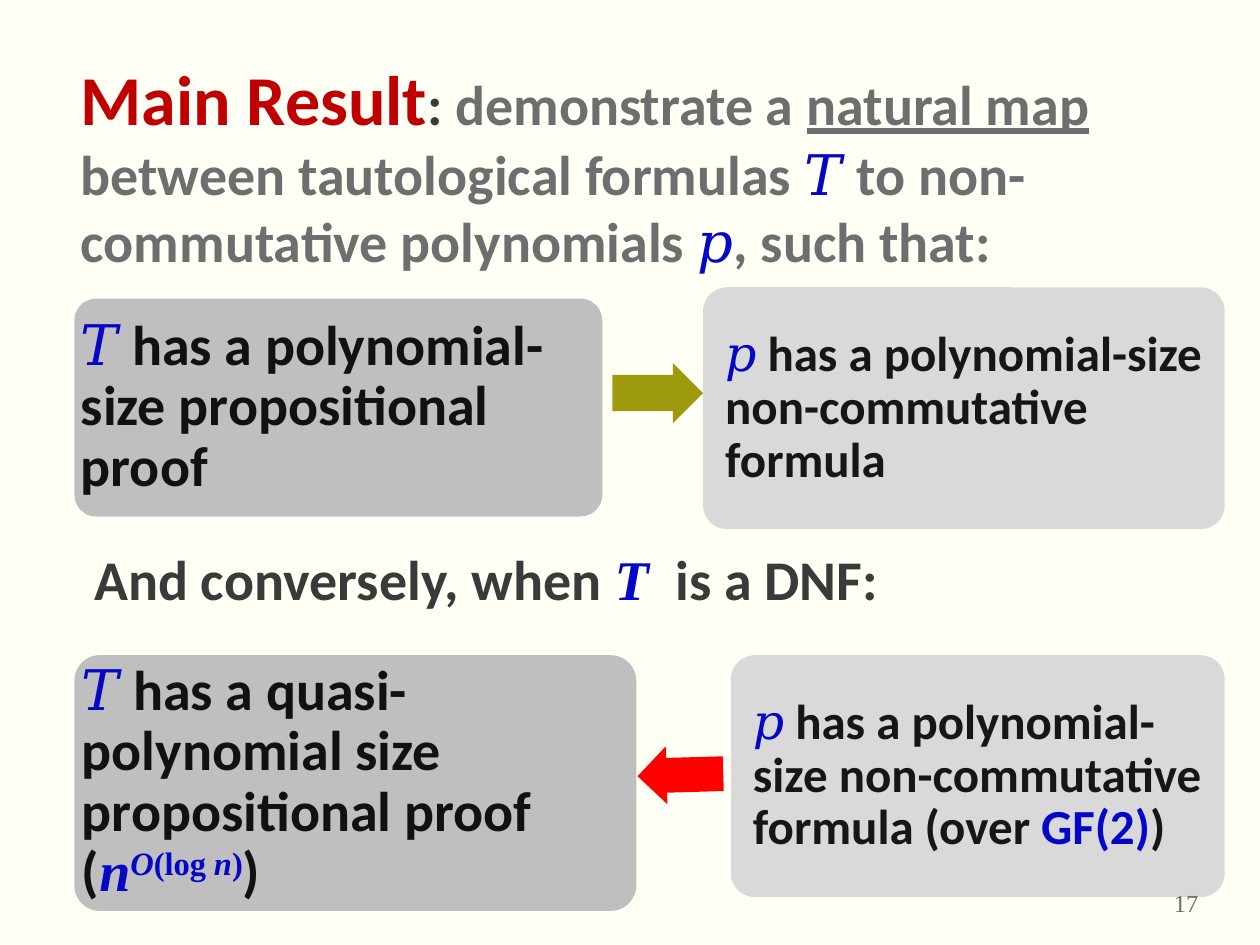
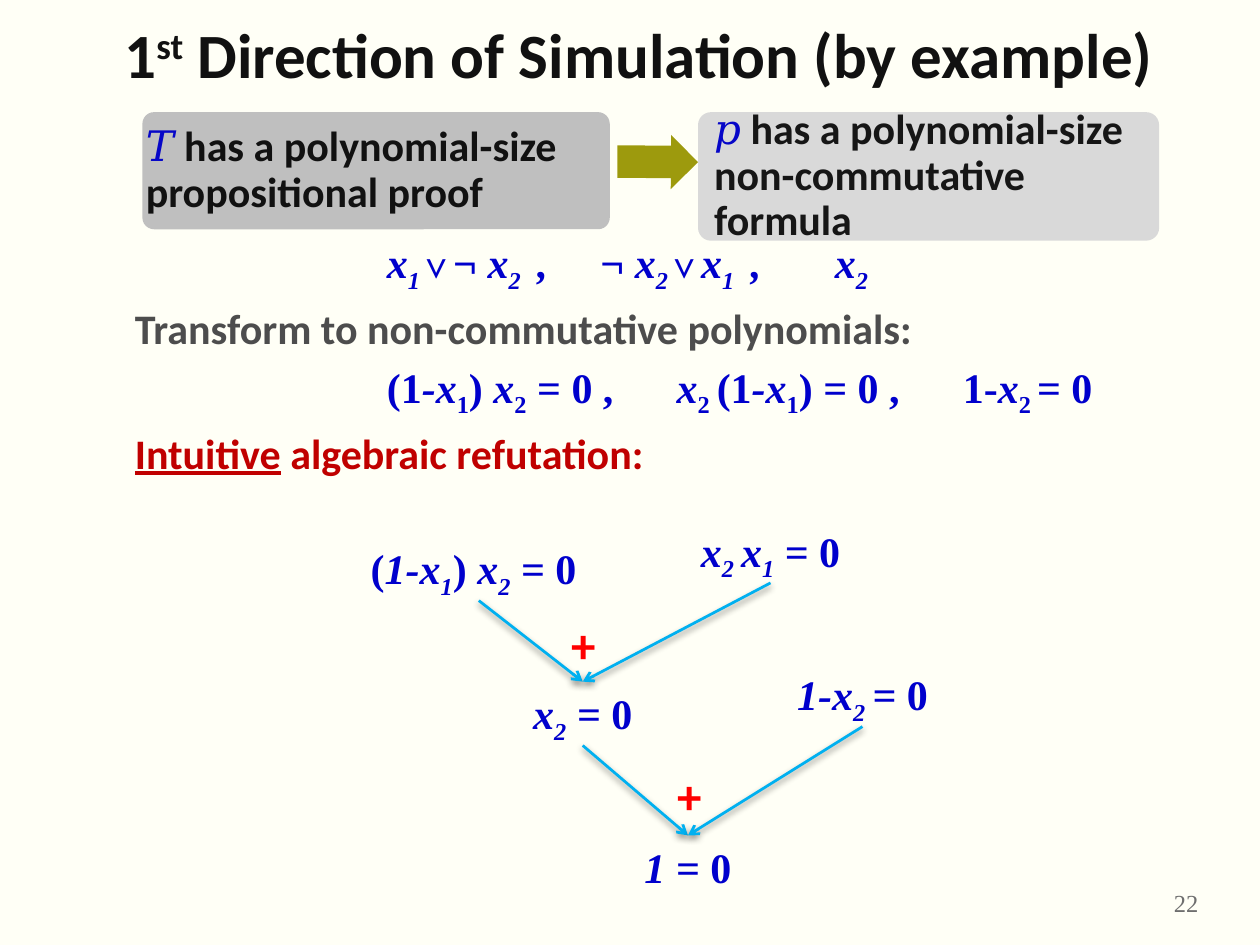
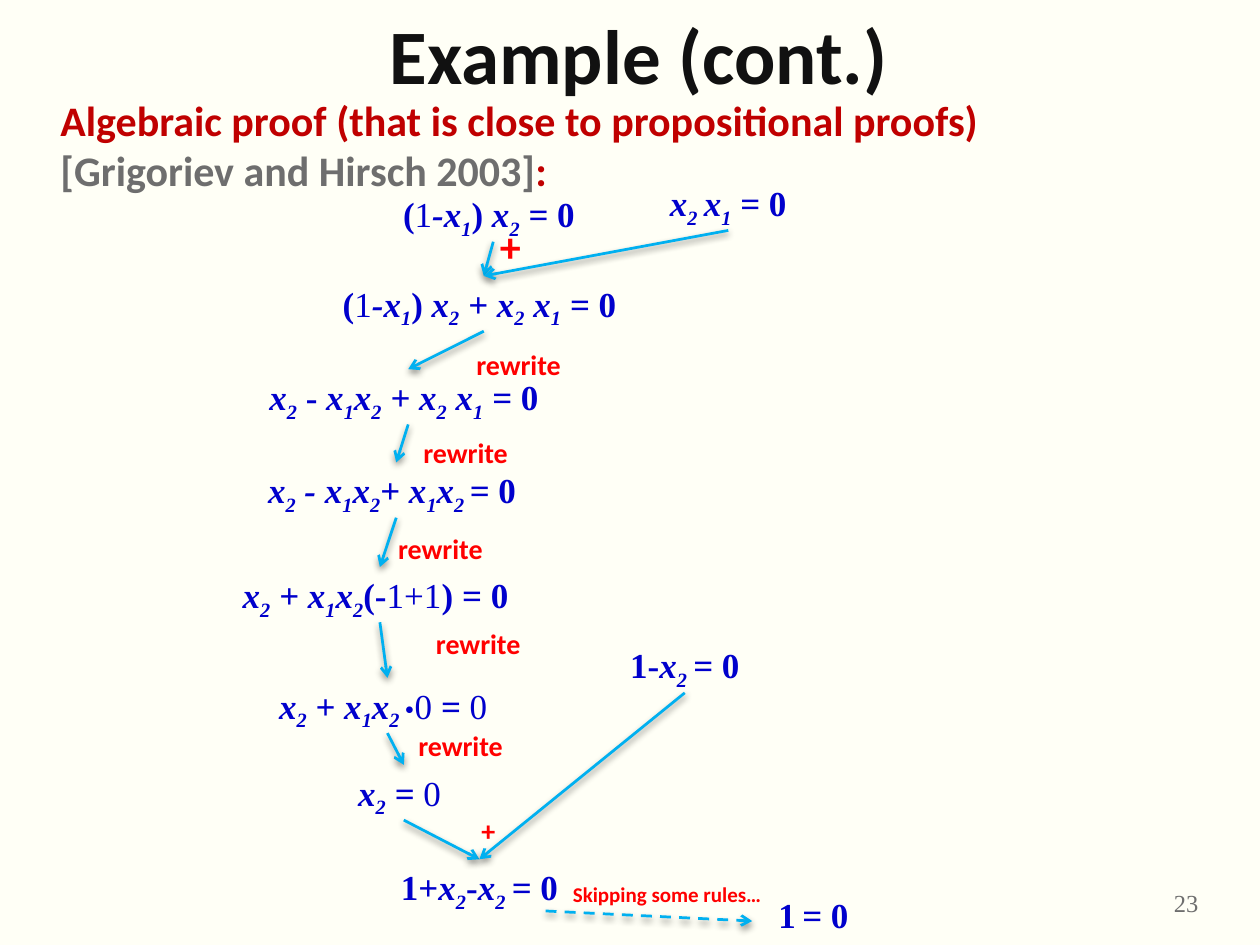
from lxml import etree
from pptx import Presentation
from pptx import util as u
from pptx.dml.color import RGBColor
from pptx.enum import dml, shapes, text
from pptx.oxml import ns

PAPER = RGBColor(0xFF, 0xFF, 0xF6)
DARK_BOX = RGBColor(0xBF, 0xBF, 0xBF)
LIGHT_BOX = RGBColor(0xD9, 0xD9, 0xD9)
OLIVE = RGBColor(0x9D, 0x9A, 0x0D)
RED = RGBColor(0xFF, 0x00, 0x00)
CRIMSON = RGBColor(0xC0, 0x00, 0x00)
SKY = RGBColor(0x00, 0xB0, 0xF0)
GREY = RGBColor(0x6E, 0x6E, 0x6E)
SLATE = RGBColor(0x4D, 0x4D, 0x4D)
CHARCOAL = RGBColor(0x3A, 0x3A, 0x3A)
INK = RGBColor(0x11, 0x11, 0x11)
SOFT_INK = RGBColor(0x16, 0x16, 0x16)
BLUE = RGBColor(0x06, 0x06, 0xC8)
FORMULA_BLUE = RGBColor(0x00, 0x00, 0xCC)
SANS, SERIF = "Calibri", "Times New Roman"

STYLES = {
    "math": (FORMULA_BLUE, SERIF), "var": (BLUE, SERIF), "field": (BLUE, SANS),
    "title": (INK, SANS), "dark": (INK, SANS), "light": (SOFT_INK, SANS),
    "key": (CRIMSON, SANS), "grey": (GREY, SANS), "slate": (SLATE, SANS),
    "lead": (CHARCOAL, SANS), "rule": (RED, SANS), "number": (GREY, SERIF),
}
MARKS = {"/": "italic", "_": "sub", "^": "sup", "*": "plain", "~": "small", "|": "under"}
SMALL = {24: 16, 20: 14}

MAIN_RESULT = [
    ("key", "Main Result", 40), ("lead", ": "), ("grey", "demonstrate a |natural map |"),
    ("grey", "between tautological formulas "), ("var", "𝑇 "),
    ("grey", "to non-commutative polynomials "), ("var", "𝑝"), ("grey", ", such that:"),
]
CONVERSE = [("lead", "And conversely, when "), ("var", "/T "), ("lead", " is a DNF:")]
PROOF = [("var", "𝑇 "), ("dark", "has a polynomial-size propositional proof")]
QUASI_PROOF = [
    ("var", "𝑇 "), ("dark", "has a quasi-polynomial size propositional proof ("),
    ("var", "/n^O/(log/ n/)^"), ("dark", ")"),
]
FORMULA = [("var", "𝑝"), ("light", " has a polynomial-size non-commutative formula")]
GF2_FORMULA = FORMULA + [("light", " (over "), ("field", "GF(2)"), ("light", ")")]

CLAIMS = {
    17: [(PROOF, (0.59, 2.37, 4.19, 1.73), DARK_BOX, 32, 0),
         (FORMULA, (5.58, 2.28, 4.14, 1.92), LIGHT_BOX, 28, 0.12),
         (QUASI_PROOF, (0.59, 5.2, 4.46, 2.03), DARK_BOX, 32, 0),
         (GF2_FORMULA, (5.8, 5.2, 3.92, 1.92), LIGHT_BOX, 28, 0.12)],
    22: [(PROOF, (1.13, 0.89, 3.71, 0.93), DARK_BOX, 24, 0),
         (FORMULA, (5.54, 0.89, 3.66, 1.02), LIGHT_BOX, 24, 0.1)],
}
BLOCK_ARROWS = {
    17: [((4.86, 2.88, 0.72, 0.48), 0, OLIVE), ((5.06, 5.92, 0.68, 0.46), 178.3, RED)],
    22: [((4.9, 1.07, 0.64, 0.43), 0.4, OLIVE)],
}

TRANSFORM = [
    ([("math", "/x_1 _/~⋁ ~¬ /x_2 _ ,"), ("math", " ", 24, 24),
      ("math", "¬ /x_2 _/~⋁ ~/x_1 _ ,"), ("math", " ", 24, 36), ("math", "/x_2_")], 2),
    ([("slate", "Transform to non-commutative polynomials:")], 0),
    ([("math", "(1/-x/_1_) /x/_2_ = 0 ,"), ("math", " ", 24, 30),
      ("math", "/x/_2_~ ~(1/-x/_1_) = 0 ,"), ("math", " ", 24, 30),
      ("math", "1-/x/_2 _= 0")], 2),
    ([("key", "|Intuitive| algebraic refutation:")], 0),
]
ALGEBRAIC = [
    ("key", "Algebraic proof (that is close to propositional proofs) "),
    ("grey", "[Grigoriev and Hirsch 2003]"), ("key", ":"),
]

REFUTATION = {
    "left": ("(/1-x_1_/) /x_2_ = /0 ", 2.82, 4.26, 1.96, False),
    "right": ("/x_2_~ ~x_1_ = /0", 5.44, 4.12, 1.35, False),
    "sum": ("/x_2_ = /0", 4.12, 5.41, 1.01, False),
    "axiom": ("/1-x_2_~ ~= /0", 6.17, 5.26, 1.35),
    "end": ("/1 = /0", 5.01, 6.63, 0.9, False),
}
REFUTATION_STEPS = [("left", "sum"), ("right", "sum"), ("sum", "end"), ("axiom", "end")]
REFUTATION_RULES = [("+", 28, 4.39, 4.83, 0.48), ("+", 28, 5.23, 6.03, 0.48)]

DERIVATION = {
    "left": ("(*1*/-x_1_/) /x_2_ = /0 ", 3.08, 1.48, 1.67, False),
    "right": ("/x_2_~ ~x_1_ = /0", 5.2, 1.39, 1.16, False),
    "sum": ("(*1*/-x_1_/) /x_2_ + x_2_ x_1_ = /0 ", 2.59, 2.19, 2.5, False),
    "expand": ("/x_2_ /-/ x_1_x_2_ + x_2_ x_1_ = /0 ", 2, 2.93, 2.48, False),
    "commute": ("/x_2_ - x_1_x_2_/+/ x_1_x_2 _= /0 ", 1.94, 3.67, 2.41),
    "factor": ("/x_2_ + x_1_x_2_/(-*1+1*) /= /0 ", 1.81, 4.5, 2.41),
    "cancel": ([("math", "/x_2_ + x_1_x_2 _"), ("math", "*•", 16), ("math", "*0 */= /*0 ")],
               1.87, 5.38, 2.41),
    "x2": ("/x_2_ = /*0 ", 2, 6.07, 2.41),
    "axiom": ("1-/x_2_~ ~= /0", 4.76, 5.06, 1.35),
    "add": ("1+/x_2_/-/x_2_~ ~= /0", 2.93, 6.82, 1.75),
    "end": ("1~ ~/= /0", 5.78, 7.04, 1.35),
}
DERIVATION_STEPS = [
    ("left", "sum"), ("right", "sum"), ("sum", "expand"), ("expand", "commute"),
    ("commute", "factor"), ("factor", "cancel"), ("cancel", "x2"), ("x2", "add"),
    ("axiom", "add"),
]
REWRITES = [(2.97, 2.71), (2.55, 3.41), (2.35, 4.17), (2.65, 4.92), (2.51, 5.73)]
DERIVATION_RULES = [("rewrite", 16, x, y, 2.29) for x, y in REWRITES] + [
    ("+", 24, 3.81, 1.7, 0.48), ("+", 16, 2.73, 6.41, 2.29),
    ("Skipping some rules…", 12, 4.15, 6.95, 2.29),
]
SKIP = ((4.33, 7.23), (5.97, 7.31))


def inches(values):
    return [u.Inches(v) for v in values]


def child(parent, tag, **attrs):
    return etree.SubElement(parent, ns.qn(tag), **attrs)


def add_run(p, chunk, style, on, size, spacing=0):
    r = p.add_run()
    r.text = chunk
    f = r.font
    f.color.rgb, f.name = STYLES[style]
    f.size = u.Pt(SMALL.get(size, size) if "small" in on else size)
    f.bold = style != "number" and "plain" not in on
    f.italic = "italic" in on
    f.underline = "under" in on
    rPr = r._r.get_or_add_rPr()
    shift = -25000 if "sub" in on else 30000 if "sup" in on else 0
    if shift:
        rPr.set("baseline", str(shift))
    if spacing:
        rPr.set("spc", str(spacing * 100))


def write(p, parts, size):
    for style, markup, *own in parts:
        on, chunk = set(), ""
        for ch in markup:
            if ch not in MARKS:
                chunk += ch
                continue
            if chunk:
                add_run(p, chunk, style, on, *(own or [size]))
            chunk = ""
            on ^= {MARKS[ch]}
        if chunk:
            add_run(p, chunk, style, on, *(own or [size]))


def place(sp, box):
    sp.left, sp.top, sp.width, sp.height = inches(box)
    sp.text_frame.auto_size = text.MSO_AUTO_SIZE.NONE
    sp.text_frame.word_wrap = True
    return sp.text_frame


def add_body(s, box, paragraphs, size):
    tf = place(s.placeholders[1], box)
    for i, (parts, margin) in enumerate(paragraphs):
        p = tf.add_paragraph() if i else tf.paragraphs[0]
        pPr = p._p.get_or_add_pPr()
        pPr.set("marL", str(int(u.Inches(margin))))
        pPr.set("indent", "0")
        child(pPr, "a:buNone")
        if i == 0:
            p.space_before = u.Pt(0)
        write(p, parts, size)


def add_title(s, markup, size):
    tf = place(s.shapes.title, (0.29, 0.16, 9.56, 0.53))
    tf.vertical_anchor = text.MSO_ANCHOR.MIDDLE
    p = tf.paragraphs[0]
    p.alignment = text.PP_ALIGN.CENTER
    write(p, [("title", markup)], size)


def add_text(s, parts, size, left, top, width, wrap=True, align=text.PP_ALIGN.CENTER):
    height = size * 1.22 / 72 + 0.1
    sp = s.shapes.add_textbox(*inches((left, top, width, height)))
    sp.text_frame.word_wrap = wrap
    sp.text_frame.auto_size = text.MSO_AUTO_SIZE.SHAPE_TO_FIT_TEXT
    p = sp.text_frame.paragraphs[0]
    p.alignment = align
    write(p, parts, size)
    return sp


def add_block(s, kind, box, fill, *adjustments):
    sp = s.shapes.add_shape(kind, *inches(box))
    sp.shadow.inherit = False
    sp.fill.solid()
    sp.fill.fore_color.rgb = fill
    sp.line.fill.background()
    for i, value in enumerate(adjustments):
        sp.adjustments[i] = value
    return sp


def add_claims(s, number):
    for parts, box, fill, size, inset in CLAIMS.get(number, []):
        tf = add_block(s, shapes.MSO_SHAPE.ROUNDED_RECTANGLE, box, fill, 0.1).text_frame
        tf.word_wrap = True
        tf.vertical_anchor = text.MSO_ANCHOR.MIDDLE
        tf.margin_left = tf.margin_right = tf.margin_top = tf.margin_bottom = u.Inches(inset)
        p = tf.paragraphs[0]
        p.alignment = text.PP_ALIGN.LEFT
        p.line_spacing = 0.9
        write(p, parts, size)
    for box, turn, fill in BLOCK_ARROWS.get(number, []):
        add_block(s, shapes.MSO_SHAPE.RIGHT_ARROW, box, fill, 0.6, 0.5).rotation = turn


def add_arrow(s, start=(0, 0), end=(0, 0), source=None, target=None, dashed=False):
    c = s.shapes.add_connector(shapes.MSO_CONNECTOR.STRAIGHT, *inches(start + end))
    if source is not None:
        c.begin_connect(source, 2)
        c.end_connect(target, 0)
    c.line.color.rgb = SKY
    c.line.width = u.Pt(1.57)
    if dashed:
        c.line.dash_style = dml.MSO_LINE.DASH
    child(c.line._get_or_add_ln(), "a:tailEnd", type="arrow")
    shadow = child(child(c._element.spPr, "a:effectLst"), "a:outerShdw", blurRad="50800",
                   dist="25400", dir="5400000", rotWithShape="0")
    child(child(shadow, "a:srgbClr", val="000000"), "a:alpha", val="45000")


def add_tree(s, nodes, steps, rules, size):
    boxes = {}
    for name, (formula, *spot) in nodes.items():
        parts = [("math", formula)] if isinstance(formula, str) else formula
        boxes[name] = add_text(s, parts, size, *spot)
    for a, b in steps:
        add_arrow(s, source=boxes[a], target=boxes[b])
    for label, label_size, *spot in rules:
        add_text(s, [("rule", label)], label_size, *spot)


def new_slide(prs, number):
    s = prs.slides.add_slide(prs.slide_layouts[1])
    add_claims(s, number)
    add_text(s, [("number", str(number))], 14, 9.08, 7, 0.67)
    return s


def main():
    prs = Presentation()
    prs.slide_width, prs.slide_height = inches((10, 7.5))
    paper = prs.slide_master.background.fill
    paper.solid()
    paper.fore_color.rgb = PAPER

    s = new_slide(prs, 17)
    title = s.shapes.title._element
    title.getparent().remove(title)
    add_body(s, (0.54, 0.39, 9.21, 2.11), [(MAIN_RESULT, 0)], 32)
    add_text(s, CONVERSE, 32, 0.65, 4.27, 7, align=text.PP_ALIGN.LEFT)

    s = new_slide(prs, 22)
    add_title(s, "1^st^ Direction of Simulation (by example)", 36)
    add_body(s, (0.97, 1.83, 8.87, 4.72), TRANSFORM, 24)
    add_tree(s, REFUTATION, REFUTATION_STEPS, REFUTATION_RULES, 24)

    s = new_slide(prs, 23)
    add_title(s, "Example (cont.)", 44)
    add_body(s, (0.38, 0.7, 8.87, 4.72), [(ALGEBRAIC, 0)], 24)
    add_tree(s, DERIVATION, DERIVATION_STEPS, DERIVATION_RULES, 20)
    add_arrow(s, *SKIP, dashed=True)

    prs.save("out.pptx")


if __name__ == "__main__":
    main()
